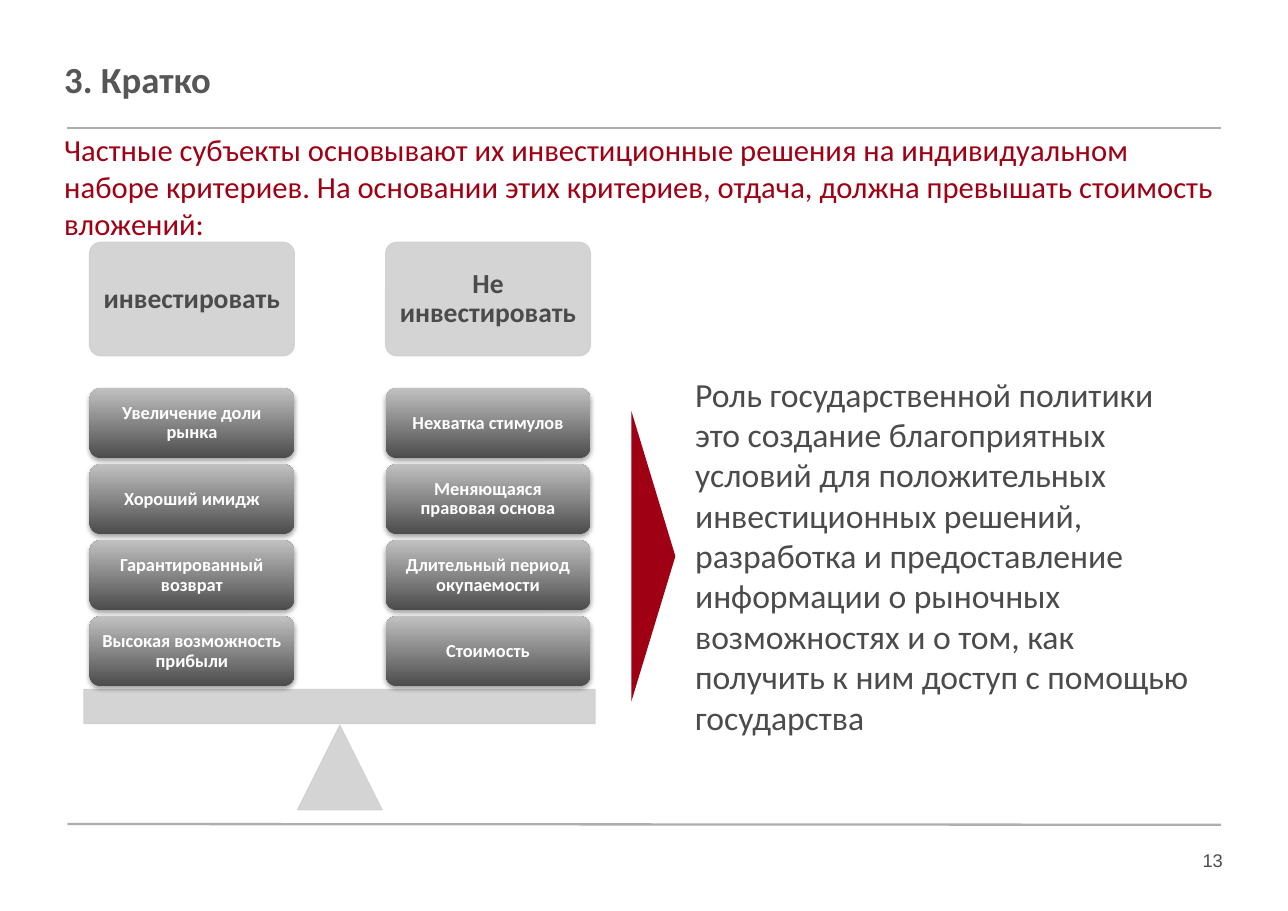
from lxml.etree import SubElement
from pptx import Presentation
from pptx.dml.color import RGBColor
from pptx.enum.shapes import MSO_CONNECTOR, MSO_SHAPE
from pptx.enum.text import MSO_ANCHOR, PP_ALIGN
from pptx.oxml.ns import qn
from pptx.util import Pt

COLORS = {
    "title": "565656",
    "text": "4B4B4B",
    "accent": "9F0014",
    "rule": "AEAEAE",
    "scale": "D0D0D0",
    "card_light": "C1C1C1",
    "card_dark": "4B4B4B",
    "white": "FFFFFF",
    "shadow": "000000",
}

COLUMN_WIDTH = 133.9
CARD_HEIGHT = 46.1
CARD_TOP = 253.5
CARD_PITCH = 49.7

COLUMNS = [
    (58.5, "инвестировать", [
        "Увеличение доли рынка",
        "Хороший имидж",
        "Гарантированный возврат",
        "Высокая возможность прибыли",
    ]),
    (252, "Не инвестировать", [
        "Нехватка стимулов",
        "Меняющаяся правовая основа",
        "Длительный период окупаемости",
        "Стоимость",
    ]),
]


class BalanceSlide:
    """Draws the styled elements of the investment balance on one slide."""

    def __init__(self, slide, font="Calibri"):
        self.shapes = slide.shapes
        self.font = font

    def color(self, name):
        return RGBColor.from_string(COLORS[name])

    def fill_text(self, frame, words, size, color, bold=False,
                  align=PP_ALIGN.LEFT, inset=0, font=None):
        frame.word_wrap = True
        frame.margin_left = frame.margin_right = Pt(inset)
        frame.margin_top = frame.margin_bottom = Pt(inset)
        frame.text = words
        paragraph = frame.paragraphs[0]
        paragraph.alignment = align
        style = paragraph.runs[0].font
        style.name = font or self.font
        style.size = Pt(size)
        style.bold = bold
        style.color.rgb = self.color(color)

    def text(self, left, top, width, height, words, size, color, **style):
        box = self.shapes.add_textbox(Pt(left), Pt(top), Pt(width), Pt(height))
        self.fill_text(box.text_frame, words, size, color, **style)

    def rule(self, start_y, end_y):
        rule = self.shapes.add_connector(
            MSO_CONNECTOR.STRAIGHT, Pt(44), Pt(start_y), Pt(797.8), Pt(end_y))
        rule.line.color.rgb = self.color("rule")
        rule.line.width = Pt(1.5)
        SubElement(rule._element.spPr, qn("a:effectLst"))

    def shape(self, kind, left, top, width, height):
        shape = self.shapes.add_shape(
            kind, Pt(left), Pt(top), Pt(width), Pt(height))
        shape.shadow.inherit = False
        return shape

    def label(self, shape, words, size, color, inset):
        frame = shape.text_frame
        self.fill_text(frame, words, size, color, bold=True,
                       align=PP_ALIGN.CENTER, inset=inset)
        frame.vertical_anchor = MSO_ANCHOR.MIDDLE
        frame.paragraphs[0].line_spacing = 0.9

    def scale_part(self, kind, left, top, width, height):
        part = self.shape(kind, left, top, width, height)
        part.fill.solid()
        part.fill.fore_color.rgb = self.color("scale")
        part.line.color.rgb = self.color("scale")
        part.line.width = Pt(0.75)
        for tint in part._element.spPr.iter(qn("a:srgbClr")):
            SubElement(tint, qn("a:alpha"), val="90000")
        return part

    def heading(self, left, words):
        heading = self.scale_part(
            MSO_SHAPE.ROUNDED_RECTANGLE, left, 158.4, COLUMN_WIDTH, 74.2)
        heading.adjustments[0] = 0.1
        self.label(heading, words, 18, "text", 7.2)

    def card(self, left, top, words):
        card = self.shape(
            MSO_SHAPE.ROUNDED_RECTANGLE, left, top, COLUMN_WIDTH, CARD_HEIGHT)
        card.fill.gradient()
        card.fill.gradient_angle = 90
        for stop, name in zip(card.fill.gradient_stops, ("card_dark", "card_light")):
            stop.color.rgb = self.color(name)
        card.line.fill.background()
        effects = card._element.spPr.find(qn("a:effectLst"))
        shadow = SubElement(
            effects, qn("a:outerShdw"), blurRad=str(Pt(3.1)), dist=str(Pt(1.8)),
            dir="5400000", rotWithShape="0")
        tint = SubElement(shadow, qn("a:srgbClr"), val=COLORS["shadow"])
        SubElement(tint, qn("a:alpha"), val="35000")
        self.label(card, words, 12, "white", 6)

    def pointer(self, left, top, width, height):
        pointer = self.shape(
            MSO_SHAPE.ISOSCELES_TRIANGLE, left, top, width, height)
        pointer.rotation = 90
        pointer.fill.solid()
        pointer.fill.fore_color.rgb = self.color("accent")
        pointer.line.fill.background()


def main():
    deck = Presentation()
    deck.slide_width, deck.slide_height = Pt(841.68), Pt(595.44)
    page = BalanceSlide(deck.slides.add_slide(deck.slide_layouts[6]))

    page.rule(538.6, 539.1)
    page.text(720, 555.1, 79.2, 22.3, "13", 12, "text",
              align=PP_ALIGN.RIGHT, font="Arial")
    page.rule(83.5, 83.5)
    page.text(42, 37.4, 703.4, 39.6, "3. Кратко", 24, "title", bold=True)
    page.text(
        42, 85.7, 760.3, 72.7,
        "Частные субъекты основывают их инвестиционные решения на "
        "индивидуальном наборе критериев. На основании этих критериев, "
        "отдача, должна превышать стоимость вложений:", 20, "accent")

    page.scale_part(MSO_SHAPE.ISOSCELES_TRIANGLE, 194.4, 474, 55.4, 55.4)
    page.scale_part(MSO_SHAPE.RECTANGLE, 54.9, 450.6, 334.1, 22.4)
    for left, heading, reasons in COLUMNS:
        page.heading(left, heading)
        for row, reason in enumerate(reasons):
            page.card(left, CARD_TOP + row * CARD_PITCH, reason)

    page.pointer(331.9, 349.2, 190.1, 28.8)
    page.text(
        454.3, 244.1, 329, 239.8,
        "Роль государственной политики это создание благоприятных условий "
        "для положительных инвестиционных решений, разработка и "
        "предоставление информации о рыночных возможностях и о том, как "
        "получить к ним доступ с помощью государства", 22, "text")

    deck.save("out.pptx")


if __name__ == "__main__":
    main()
